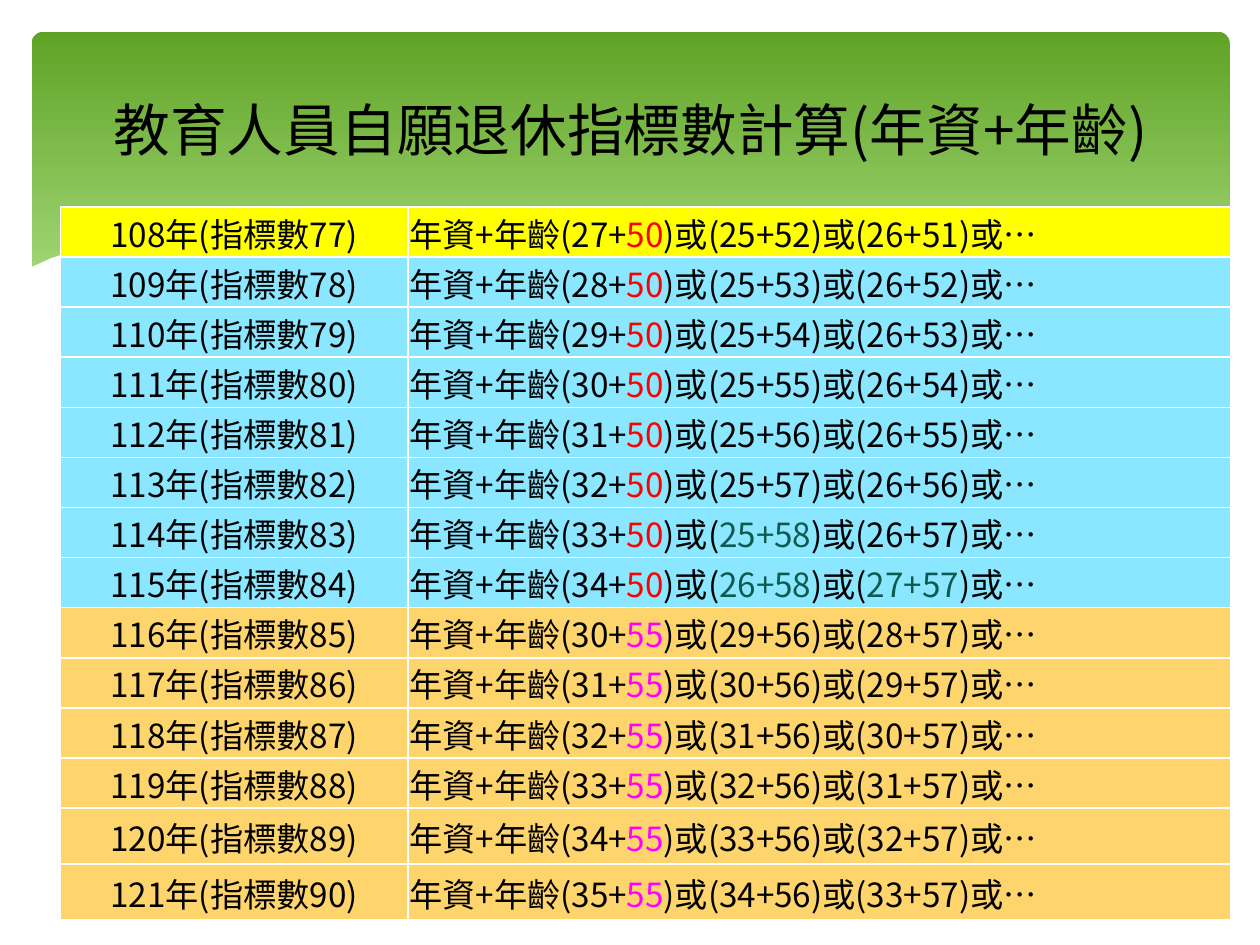
import pptx
import pptx.dml.color
import pptx.enum.shapes
import pptx.enum.text
import pptx.oxml
import pptx.oxml.ns
import pptx.util
from pptx.util import Cm

FONT = "Noto Sans CJK SC"
NS = pptx.oxml.ns.nsdecls("a")
MIDDLE = pptx.enum.text.MSO_ANCHOR.MIDDLE
ALIGN = pptx.enum.text.PP_ALIGN
BLACK, WHITE, GREEN = "000000", "FFFFFF", "0D5A4F"
SHADOW = (f'<a:effectLst {NS}><a:outerShdw blurRad="38100" dist="38100" '
          'dir="2700000"><a:srgbClr val="000000"><a:alpha val="43000"/>'
          '</a:srgbClr></a:outerShdw></a:effectLst>')


def color(code):
    return pptx.dml.color.RGBColor.from_string(code)


def apply(item, **values):
    for key, value in values.items():
        setattr(item, key, value)


class Deck:
    def __init__(self, wide, high):
        self.file = pptx.Presentation()
        apply(self.file, slide_width=wide, slide_height=high)
        self.slide = self.file.slides.add_slide(self.file.slide_layouts[6])

    def runs(self, para, parts, shadow=False):
        """Add (text, size, colour) parts to a paragraph."""
        for text, size, code in parts:
            run = para.add_run()
            run.text = text
            apply(run.font, name=FONT, size=pptx.util.Pt(size))
            run.font.color.rgb = color(code)
            props = run.font._element
            latin = props.find(pptx.oxml.ns.qn("a:latin"))
            latin.addnext(pptx.oxml.parse_xml(f'<a:ea {NS} typeface="{FONT}"/>'))
            if shadow:
                latin.addprevious(pptx.oxml.parse_xml(SHADOW))

    def panel(self, box, round, stops):
        kind = pptx.enum.shapes.MSO_SHAPE.ROUNDED_RECTANGLE
        shape = self.slide.shapes.add_shape(kind, *box)
        shape.adjustments[0] = round
        shape.shadow.inherit = False
        shape.line.fill.background()
        shape.fill.gradient()
        shape.fill.gradient_angle = 270
        for stop, (place, code) in zip(shape.fill.gradient_stops, stops):
            stop.position = place
            stop.color.rgb = color(code)

    def wave(self, points, code):
        first, *rest = [(Cm(x), Cm(y)) for x, y in points]
        build = self.slide.shapes.build_freeform(*first)
        build.add_line_segments(rest, close=True)
        shape = build.convert_to_shape()
        shape.shadow.inherit = False
        shape.line.fill.background()
        shape.fill.solid()
        shape.fill.fore_color.rgb = color(code)

    def title(self, box, parts):
        frame = self.slide.shapes.add_textbox(*box).text_frame
        apply(frame, word_wrap=True, vertical_anchor=MIDDLE)
        self.runs(frame.paragraphs[0], parts, shadow=True)

    def table(self, box, wide, high, rows):
        """Draw rows of (fill, list of cell parts)."""
        grid = self.slide.shapes.add_table(len(rows), len(wide), *box).table
        apply(grid, first_row=False, horz_banding=False)
        for col, size in zip(grid.columns, wide):
            col.width = size
        for row, size, (code, cells) in zip(grid.rows, high, rows):
            row.height = size
            for cell, parts, side in zip(row.cells, cells, (ALIGN.CENTER, ALIGN.LEFT)):
                self.cell(cell, parts, side, code)

    def cell(self, cell, parts, side, code):
        edge = Cm(0.03)
        apply(cell, vertical_anchor=MIDDLE, margin_left=edge,
              margin_right=edge, margin_top=edge, margin_bottom=0)
        for name in ("lnL", "lnR", "lnT", "lnB"):
            cell._tc.get_or_add_tcPr().append(pptx.oxml.parse_xml(
                f'<a:{name} {NS} w="12700"><a:solidFill><a:srgbClr val="{WHITE}"/>'
                f'</a:solidFill></a:{name}>'))
        cell.fill.solid()
        cell.fill.fore_color.rgb = color(code)
        para = cell.text_frame.paragraphs[0]
        para.alignment = side
        self.runs(para, parts)


def make_row(year):
    """Each pair of service years and age adds up to the year's index."""
    index = year - 31
    if year < 116:
        work = 26 if year == 115 else 25
        ages, mark = (50, index - work, index - work - 1), "FF0000"
    else:
        ages, mark = (55, 56, 57), "FF00FF"
    fill = "FFFF00" if year == 108 else "8BE6FF" if year < 116 else "FED46C"
    pairs = [f"{index - age}+{age}" for age in ages]
    greens = {114: pairs[1:2], 115: pairs[1:]}.get(year, [])
    parts = [(f"年資+年齡({index - ages[0]}+", BLACK), (str(ages[0]), mark)]
    for pair in pairs[1:]:
        parts += [(")或(", BLACK), (pair, GREEN if pair in greens else BLACK)]
    parts.append((")或…", BLACK))
    label = [(f"{year}年(指標數{index})", 19, BLACK)]
    return fill, [label, [(text, 19, code) for text, code in parts]]


def main():
    deck = Deck(Cm(25.4), Cm(19.05))
    deck.panel((Cm(0.64), Cm(0.64), Cm(24.15), Cm(6.86)), 0.034,
               [(0, "5FA326"), (0.9, "B2E389")])
    deck.wave([(0.58, 5.41), (1.02, 5.21), (1.5, 5.05), (2.16, 4.9), (3.02, 4.75),
               (4.09, 4.67), (5.36, 4.67), (6.88, 4.78), (8.64, 5), (10.62, 5.41),
               (12.78, 5.92), (14.71, 6.35), (16.46, 6.65), (17.98, 6.86),
               (19.38, 6.99), (20.55, 7.04), (21.59, 6.99), (22.53, 6.89),
               (23.37, 6.73), (24.13, 6.5), (24.82, 6.25), (24.82, 8.36),
               (0.58, 8.36)], WHITE)
    deck.title((Cm(1.7), Cm(1.45), Cm(22.63), Cm(2.01)),
               [(" ", 43.2, BLACK), ("教育人員自願退休指標數計算(年資+年齡)", 32.4, BLACK)])
    rows = [make_row(year) for year in range(108, 122)]
    deck.table((Cm(1.22), Cm(4.17), Cm(23.6), Cm(14.35)), (Cm(7), Cm(16.6)),
               [Cm(1.01)] * 12 + [Cm(1.13)] * 2, rows)
    deck.file.save("out.pptx")


if __name__ == "__main__":
    main()
